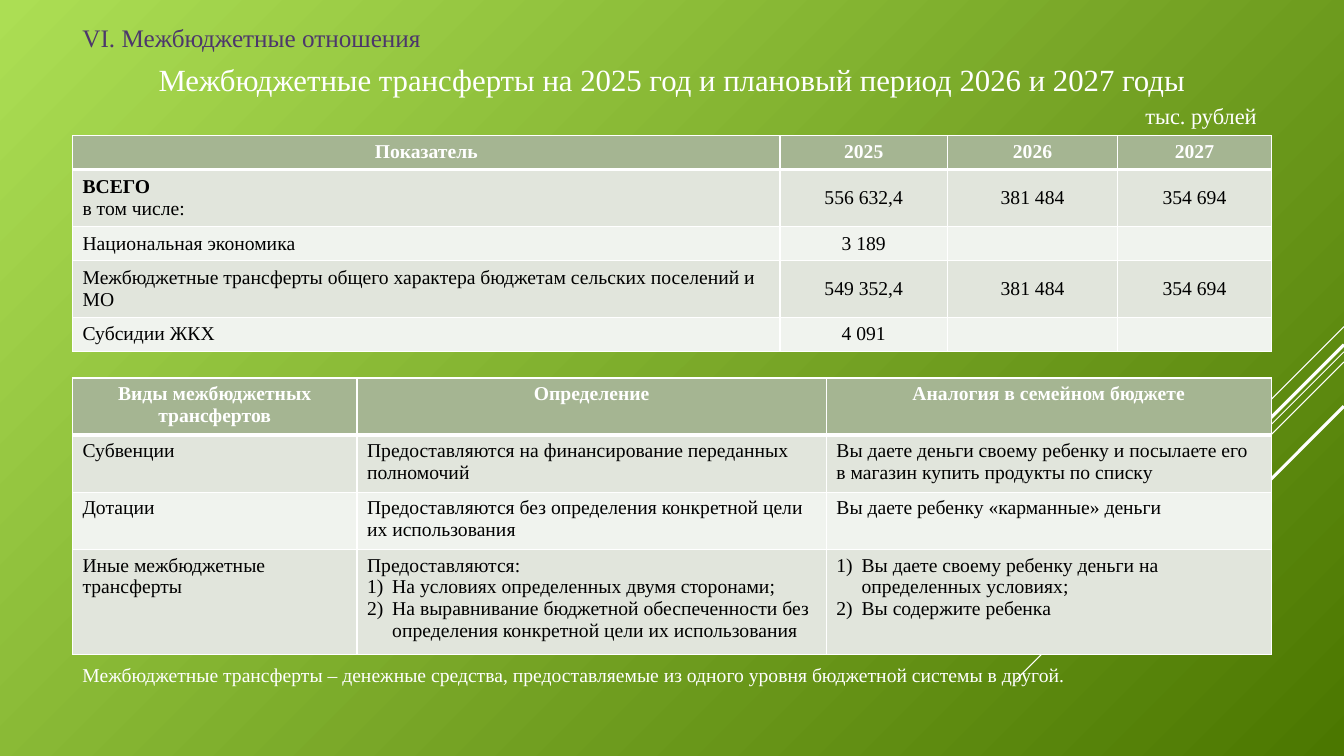
from pptx import Presentation
from pptx.dml.color import RGBColor
from pptx.enum.shapes import MSO_CONNECTOR
from pptx.enum.text import MSO_ANCHOR, PP_ALIGN
from pptx.util import Pt
from lxml.etree import SubElement
from pptx.oxml.ns import qn

HUES = {"light": "ACDE54", "dark": "4B7700", "white": "FFFFFF", "black": "000000",
        "violet": "4C376B", "head": "A5B592", "odd": "E1E5DC", "even": "F0F3EE"}
FONT = "Times New Roman"
LEFT, WIDTH = 51.8, 856


def style(para, size, hue, align=PP_ALIGN.LEFT, bold=False):
    para.alignment = align
    for run in para.runs:
        font = run.font
        font.name, font.size, font.bold = FONT, Pt(size), bold
        font.color.rgb = RGBColor.from_string(HUES[hue])
    if not para.runs:
        SubElement(para._p, qn("a:endParaRPr"), sz=str(size * 100))


def add_grid(top, cols, rows, data, centred, anchor):
    """Add a table; columns from number `centred` on have centred text."""
    frame = slide.shapes.add_table(len(rows), len(cols), Pt(LEFT), Pt(top),
                                   Pt(sum(cols)), Pt(sum(rows)))
    grid = frame.table
    for col, width in zip(grid.columns, cols):
        col.width = Pt(width)
    for r, (row, height) in enumerate(zip(grid.rows, rows)):
        row.height = Pt(height)
        for c, cell in enumerate(row.cells):
            cell.text_frame.text = data[r][c]
            cell.vertical_anchor = anchor if r else MSO_ANCHOR.TOP
            mid = r == 0 or c >= centred
            for para in cell.text_frame.paragraphs:
                style(para, 14, "black" if r else "white",
                      PP_ALIGN.CENTER if mid else PP_ALIGN.LEFT, r == 0)
            # Borders go before the fill; the header rule is thick
            props = cell._tc.get_or_add_tcPr()
            for side in ("L", "R", "T", "B"):
                thick = (r, side) in ((0, "B"), (1, "T"))
                edge = SubElement(props, qn("a:ln" + side), w=str(Pt(3 if thick else 0.96)))
                fill = SubElement(edge, qn("a:solidFill"))
                SubElement(fill, qn("a:srgbClr"), val=HUES["white"])
            cell.fill.solid()
            band = "head" if r == 0 else "odd" if r % 2 else "even"
            cell.fill.fore_color.rgb = RGBColor.from_string(HUES[band])
    return grid


deck = Presentation()
deck.slide_width, deck.slide_height = Pt(960), Pt(540)
slide = deck.slides.add_slide(deck.slide_layouts[6])

# Background
back = slide.background.fill
back.gradient()
back.gradient_angle = 315
for stop, hue in zip(back.gradient_stops, ("light", "dark")):
    stop.color.rgb = RGBColor.from_string(HUES[hue])

# Diagonal lines from the right edge: start height, run, weight
for start, run, weight in ((233.3, 72, 0.75), (251.3, 234.7, 0.75), (258.5, 149.5, 0.75),
                           (246.2, 138, 2.25), (290.2, 100, 2.25)):
    line = slide.shapes.add_connector(MSO_CONNECTOR.STRAIGHT, Pt(960), Pt(start),
                                      Pt(960 - run), Pt(start + run))
    line.line.color.rgb = RGBColor.from_string(HUES["white"])
    line.line.width = Pt(weight)
    SubElement(line._element.spPr, qn("a:effectLst"))

# Headings, unit and footnote: text, top, width, height, size, colour, alignment
for text, top, width, height, size, hue, align in (
        ("VI. Межбюджетные отношения", 12.2, WIDTH, 28, 18, "violet", PP_ALIGN.LEFT),
        ("Межбюджетные трансферты на 2025 год и плановый период 2026 и 2027 годы",
         39.5, WIDTH, 32, 22, "white", PP_ALIGN.CENTER),
        ("тыс. рублей", 69.3, WIDTH - 3, 26, 16, "white", PP_ALIGN.RIGHT),
        ("Межбюджетные трансферты – денежные средства, предоставляемые "
         "из одного уровня бюджетной системы в другой.",
         469.9, WIDTH, 24, 14, "white", PP_ALIGN.LEFT)):
    box = slide.shapes.add_textbox(Pt(LEFT), Pt(top), Pt(width), Pt(height))
    box.text_frame.word_wrap = True
    box.text_frame.text = text
    style(box.text_frame.paragraphs[0], size, hue, align)

# Table of sums
sums = add_grid(97, (505.4, 119.6, 121.6, 109.8), (22.6, 38.4, 22.6, 38.4, 22.6), (
    ("Показатель", "2025", "2026", "2027"),
    ("ВСЕГО\nв том числе:", "556 632,4", "381 484", "354 694"),
    ("Национальная экономика", "3 189", "", ""),
    ("Межбюджетные трансферты общего характера бюджетам сельских поселений и МО",
     "549 352,4", "381 484", "354 694"),
    ("Субсидии ЖКХ", "4 091", "", "")), 1, MSO_ANCHOR.MIDDLE)
sums.cell(1, 0).text_frame.paragraphs[0].runs[0].font.bold = True

# Table of kinds
kinds = add_grid(270, (203.2, 335.3, 317.7), (38.4, 38.4, 38.4, 75), (
    ("Виды межбюджетных трансфертов", "Определение", "Аналогия в семейном бюджете"),
    ("Субвенции", "Предоставляются на финансирование переданных полномочий",
     "Вы даете деньги своему ребенку и посылаете его в магазин купить продукты по списку"),
    ("Дотации", "Предоставляются без определения конкретной цели их использования",
     "Вы даете ребенку «карманные» деньги"),
    ("Иные межбюджетные трансферты",
     "Предоставляются:\nНа условиях определенных двумя сторонами;\n"
     "На выравнивание бюджетной обеспеченности без определения конкретной цели "
     "их использования",
     "Вы даете своему ребенку деньги на определенных условиях;\nВы содержите ребенка")),
    3, MSO_ANCHOR.TOP)

# Numbered lists in the last row: column, first numbered paragraph
for col, first in ((1, 1), (2, 0)):
    for para in kinds.cell(3, col).text_frame.paragraphs[first:]:
        props = para._p.get_or_add_pPr()
        props.set("marL", str(Pt(18)))
        props.set("indent", str(-Pt(18)))
        SubElement(props, qn("a:buAutoNum"), type="arabicParenR")

deck.save("out.pptx")
